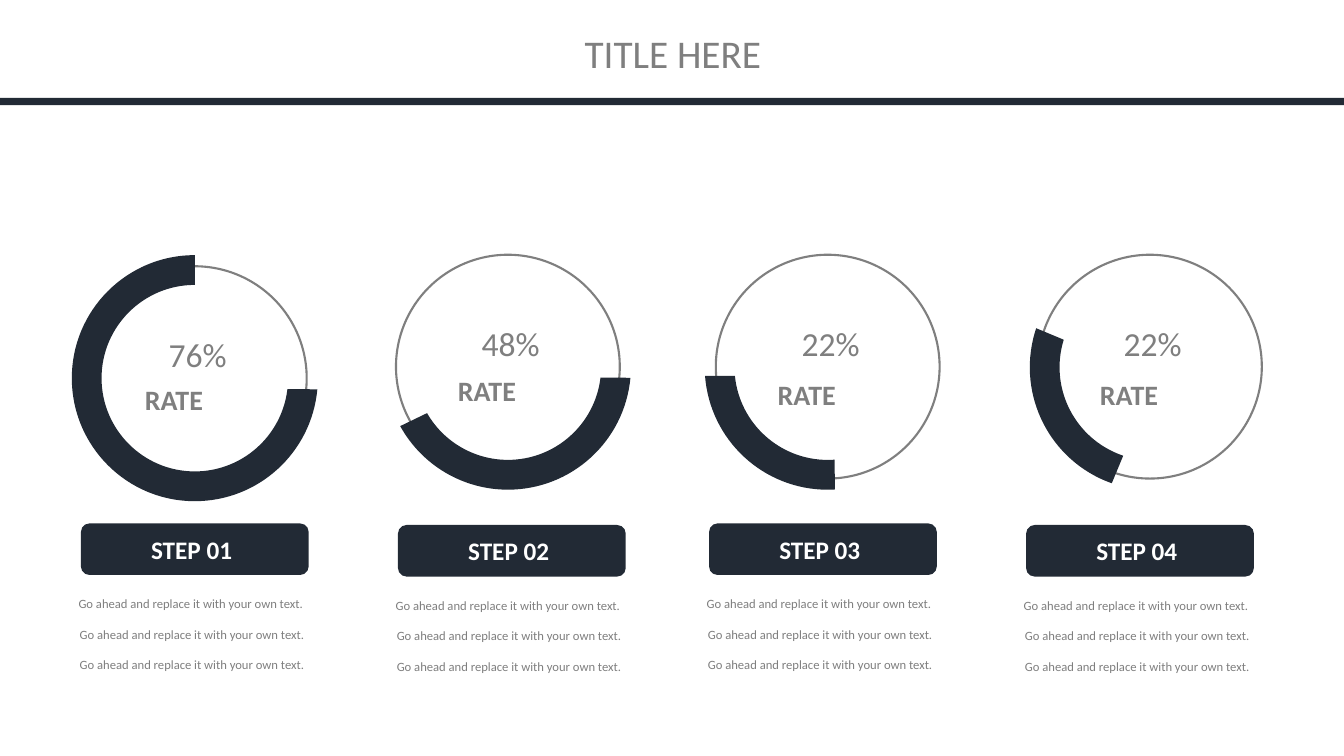
from math import ceil, cos, floor, radians, sin, tan

from pptx import Presentation
from pptx.dml.color import RGBColor
from pptx.enum import shapes, text
from pptx.oxml.ns import qn
from pptx.util import Cm, Pt

NAVY, GRAY, WHITE = "222A35", "7F7F7F", "FFFFFF"
WIDE = 33.87
RING, OUTER, INNER = 2.82, 3.1, 2.35
LEFT, MID = text.PP_ALIGN.LEFT, text.PP_ALIGN.CENTER
NOTE = "Go ahead and replace it with your own text."

GAUGES = [
    ("76%", 4.91, 9.53, -0.02, (5.2, 6.8), (270, 270), 0),
    ("48%", 12.8, 9.24, 0.04, (5.2, 6.8), (151.1, 150.1), 0),
    ("22%", 20.86, 9.24, 0.15, (86.7, 85.7), (175.7, 174.4), 0),
    ("22%", 28.98, 9.24, 0.15, (86.7, 85.7), (175.7, 174.4), 22.8),
]
STEPS = [
    ("STEP 01", 2.04, 13.19),
    ("STEP 02", 10.03, 13.23),
    ("STEP 03", 17.87, 13.19),
    ("STEP 04", 25.86, 13.23),
]


def color(code):
    """Turn a hex string into a colour."""
    return RGBColor.from_string(code)


def paint(shape, fill=None, line=None):
    """Set the fill and outline of a shape and drop its shadow."""
    shape.shadow.inherit = False
    if fill:
        shape.fill.solid()
        shape.fill.fore_color.rgb = color(fill)
    else:
        shape.fill.background()
    if line:
        shape.line.color.rgb = color(line)
        shape.line.width = Pt(1.5)
    else:
        shape.line.fill.background()
    return shape


def label(slide, box, words, size, code=GRAY, bold=False, align=LEFT,
          inset=True, wrap=True):
    """Add a text box with one paragraph and return the paragraph."""
    frame = slide.shapes.add_textbox(*map(Cm, box)).text_frame
    frame.word_wrap = wrap
    if not inset:
        frame.margin_left = frame.margin_right = 0
        frame.margin_top = frame.margin_bottom = 0
    para = frame.paragraphs[0]
    para.text = words
    para.alignment = align
    font = para.font
    font.name, font.size, font.bold = "Calibri", Pt(size), bold
    font.color.rgb = color(code)
    return para


def header(slide, x, y, w):
    """Add the rule and the title above it."""
    bar = slide.shapes.add_shape(
        shapes.MSO_SHAPE.RECTANGLE, Cm(x), Cm(y + 2.47), Cm(w), Cm(0.18))
    paint(bar, NAVY)
    label(slide, (x + 12.32, y + 0.74, 9.27, 1.19), "TITLE HERE", 28,
          align=MID, inset=False)


def curve(x, y, radius, start, end):
    """List the Bezier points of an arc, cut at each quarter turn."""
    cuts = [90 * i for i in range(floor(start / 90) + 1, ceil(end / 90))]
    stops = [radians(a) for a in [start, *cuts, end]]
    spots = [(x + radius * cos(stops[0]), y + radius * sin(stops[0]))]
    for a, b in zip(stops, stops[1:]):
        pull = radius * 4 / 3 * tan((b - a) / 4)
        ax, ay = x + radius * cos(a), y + radius * sin(a)
        bx, by = x + radius * cos(b), y + radius * sin(b)
        spots += [(ax - pull * sin(a), ay + pull * cos(a)),
                  (bx + pull * sin(b), by - pull * cos(b)), (bx, by)]
    return [(Cm(px), Cm(py)) for px, py in spots]


def bend(lines):
    """Merge each three line segments into one Bezier curve."""
    for i in range(0, len(lines), 3):
        first = lines[i]
        bow = first.makeelement(qn("a:cubicBezTo"), {})
        first.addprevious(bow)
        for line in lines[i:i + 3]:
            bow.append(line[0])
            line.getparent().remove(line)


def band(slide, x, y, start, end, turn):
    """Add a thick arc around a centre."""
    outer = curve(x, y, OUTER, start[0], end[0])
    inner = curve(x, y, INNER, start[1], end[1])[::-1]
    path = slide.shapes.build_freeform(*outer[0], scale=1.0)
    path.add_line_segments(outer[1:] + inner, close=True)
    arc = paint(path.convert_to_shape(), NAVY)
    lines = list(arc.element.iter(qn("a:lnTo")))
    side = len(outer) - 1
    bend(lines[:side])
    bend(lines[side + 1:])
    if turn:
        arc.rotation = turn
        arc.left, arc.top = Cm(x - 3.55), Cm(y - 0.45)


def gauge(slide, x, y, rate, drop, start, end, turn):
    """Add a ring with a thick arc and its rate around a centre."""
    ring = slide.shapes.add_shape(
        shapes.MSO_SHAPE.OVAL, Cm(x - RING), Cm(y - RING), Cm(2 * RING), Cm(2 * RING))
    paint(ring, line=GRAY)
    band(slide, x, y, start, end, turn)
    label(slide, (x - 0.91, y - 1.24, 1.98, 1.27), rate, 24, wrap=False)
    label(slide, (x - 1.51, y + drop, 1.98, 1.12), "RATE", 20, bold=True, wrap=False)


def step(slide, x, y, name):
    """Add a step button and the three notes under it."""
    button = slide.shapes.add_shape(
        shapes.MSO_SHAPE.ROUNDED_RECTANGLE, Cm(x), Cm(y), Cm(5.74), Cm(1.3))
    paint(button, NAVY)
    label(slide, (x - 0.46, y + 0.14, 6.5, 1.02), name, 18, WHITE, True, MID)
    for row in range(3):
        shift = 0.06 if row == 0 else 0.03
        para = label(slide, (x - shift, y + 1.75 + 0.77 * row, 6.5, 0.46), NOTE, 9,
                     inset=False)
        para.line_spacing = 1.2


def main():
    """Build the slide and save it."""
    deck = Presentation()
    deck.slide_width, deck.slide_height = Cm(WIDE), Cm(19.05)
    slide = deck.slides.add_slide(deck.slide_layouts[6])
    header(slide, 0, 0, WIDE)
    for rate, x, y, drop, start, end, turn in GAUGES:
        gauge(slide, x, y, rate, drop, start, end, turn)
    for name, x, y in STEPS:
        step(slide, x, y, name)
    deck.save("out.pptx")


if __name__ == "__main__":
    main()
